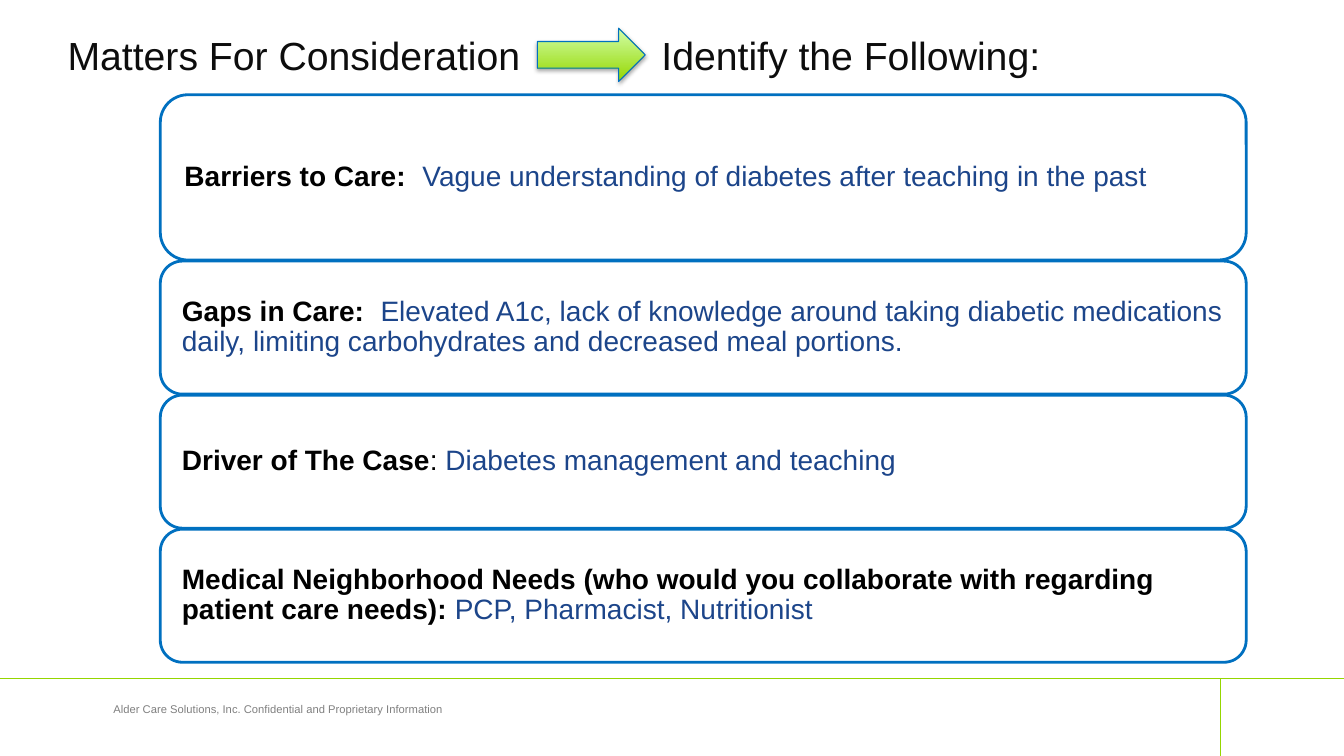
"""Build the care-planning slide with its four considerations."""
from dataclasses import dataclass
from typing import Optional

from lxml.etree import SubElement
from pptx import Presentation
from pptx.dml.color import RGBColor
from pptx.enum.shapes import MSO_CONNECTOR, MSO_SHAPE
from pptx.enum.text import MSO_ANCHOR, MSO_AUTO_SIZE, PP_ALIGN
from pptx.oxml.ns import qn
from pptx.slide import Slide
from pptx.text.text import TextFrame, _Paragraph, _Run
from pptx.util import Inches, Pt


@dataclass(frozen=True)
class Theme:
    """Colours, font and type sizes of the slide."""
    font: str = "Arial"
    title_color: str = "0D0D0D"
    label_color: str = "000000"
    answer_color: str = "1C458A"
    footer_color: str = "808080"
    outline: str = "0070C0"
    card_fill: str = "FFFFFF"
    green: str = "95D600"
    pale_green: str = "D2FFA9"
    title_size: int = 28
    card_size: int = 20
    footer_size: int = 8


@dataclass(frozen=True)
class Span:
    """A stretch of text in one style."""
    text: str
    color: str
    bold: bool = False


@dataclass(frozen=True)
class Card:
    """A rounded box with its height, inset and text."""
    height: float
    inset: float
    spans: tuple[Span, ...]
    tab: Optional[float] = None


@dataclass(frozen=True)
class Rule:
    """A thin line from one point to another."""
    start: tuple[float, float]
    end: tuple[float, float]


THEME = Theme()
PAGE_WIDTH, PAGE_HEIGHT = 13.33, 7.5
CARD_LEFT, CARD_TOP, CARD_WIDTH, CARD_GAP = 1.59, 0.94, 10.77, 0.01
FOOTER_TOP, FOOTER_SPLIT = 6.73, 12.1

RULES = (
    Rule((FOOTER_SPLIT, PAGE_HEIGHT), (FOOTER_SPLIT, FOOTER_TOP)),
    Rule((0, FOOTER_TOP), (PAGE_WIDTH, FOOTER_TOP)),
)


def label(text: str) -> Span:
    """Return a bold heading span."""
    return Span(text, THEME.label_color, True)


def answer(text: str) -> Span:
    """Return a blue answer span."""
    return Span(text, THEME.answer_color)


CARDS = (
    Card(1.64, 0.16, (
        label("Barriers to Care:\t"),
        answer("Vague understanding of diabetes after teaching in the past"),
    ), tab=2.36),
    Card(1.32, 0.15, (
        label("Gaps in Care:\t"),
        answer("Elevated A1c, lack of knowledge around taking diabetic medications "
               "daily, limiting carbohydrates and decreased meal portions."),
    ), tab=1.97),
    Card(1.32, 0.15, (
        label("Driver of The Case"),
        Span(": ", THEME.label_color),
        answer("Diabetes management and teaching"),
    )),
    Card(1.32, 0.15, (
        label("Medical Neighborhood Needs (who would you collaborate with regarding "
              "patient care needs): "),
        answer("PCP, Pharmacist, Nutritionist"),
    )),
)


def rgb(color: str) -> RGBColor:
    """Turn a hex string into a colour."""
    return RGBColor.from_string(color)


def style_run(run: _Run, size: int, color: str, bold: bool = False) -> None:
    """Set font, size, colour and weight of a run."""
    run.font.name = THEME.font
    run.font.size = Pt(size)
    run.font.bold = bold
    run.font.color.rgb = rgb(color)


def set_margins(frame: TextFrame, inset: float) -> None:
    """Give a text frame the same inset on all sides."""
    frame.margin_left = frame.margin_right = Inches(inset)
    frame.margin_top = frame.margin_bottom = Inches(inset)


def add_tab(para: _Paragraph, position: float) -> None:
    """Add a left tab stop to a paragraph."""
    tabs = SubElement(para._p.get_or_add_pPr(), qn("a:tabLst"))
    SubElement(tabs, qn("a:tab"), pos=str(Inches(position)), algn="l")


def add_rule(page: Slide, rule: Rule) -> None:
    """Draw a thin green line."""
    points = [Inches(value) for value in (*rule.start, *rule.end)]
    line = page.shapes.add_connector(MSO_CONNECTOR.STRAIGHT, *points)
    line.line.color.rgb = rgb(THEME.green)
    line.line.width = Pt(0.5)
    SubElement(line.element.spPr, qn("a:effectLst"))


def add_footer(page: Slide) -> None:
    """Write the confidentiality line."""
    box = page.shapes.add_textbox(Inches(0.42), Inches(6.92), Inches(4.68), Inches(0.42))
    frame = box.text_frame
    frame.word_wrap = True
    frame.text = "Alder Care Solutions, Inc. Confidential and Proprietary Information"
    para = frame.paragraphs[0]
    para.alignment = PP_ALIGN.CENTER
    style_run(para.runs[0], THEME.footer_size, THEME.footer_color)


def fill_title(page: Slide) -> None:
    """Place the two-part title around the arrow."""
    title = page.shapes.title
    title.left, title.top = Inches(0.67), Inches(0.28)
    title.width, title.height = Inches(10.25), Inches(0.52)
    frame = title.text_frame
    frame.text = "Matters For Consideration\tIdentify the Following:"
    frame.auto_size = MSO_AUTO_SIZE.NONE
    frame.vertical_anchor = MSO_ANCHOR.MIDDLE
    set_margins(frame, 0)
    para = frame.paragraphs[0]
    add_tab(para, 5.89)
    para.alignment = PP_ALIGN.LEFT
    for run in para.runs:
        style_run(run, THEME.title_size, THEME.title_color)


def add_arrow(page: Slide) -> None:
    """Draw the green arrow with its soft shadow."""
    arrow = page.shapes.add_shape(
        MSO_SHAPE.RIGHT_ARROW, Inches(5.33), Inches(0.28), Inches(1.07), Inches(0.53))
    arrow.fill.gradient()
    arrow.fill.gradient_angle = 90
    for stop, color, place in zip(
            arrow.fill.gradient_stops, (THEME.green, THEME.pale_green), (0, 1)):
        stop.color.rgb = rgb(color)
        stop.position = place
    arrow.line.color.rgb = rgb(THEME.outline)
    arrow.line.width = Pt(0.75)
    arrow.shadow.inherit = False
    effects = arrow.element.spPr.find(qn("a:effectLst"))
    shadow = SubElement(effects, qn("a:outerShdw"), blurRad=str(Pt(3.1)),
                        dist=str(Pt(1.8)), dir="5400000", rotWithShape="0")
    color = SubElement(shadow, qn("a:srgbClr"), val="000000")
    SubElement(color, qn("a:alpha"), val="35000")


def add_card(page: Slide, card: Card, top: float) -> None:
    """Draw one rounded box and its text."""
    box = page.shapes.add_shape(
        MSO_SHAPE.ROUNDED_RECTANGLE, Inches(CARD_LEFT), Inches(top),
        Inches(CARD_WIDTH), Inches(card.height))
    box.shadow.inherit = False
    box.fill.solid()
    box.fill.fore_color.rgb = rgb(THEME.card_fill)
    box.line.color.rgb = rgb(THEME.outline)
    box.line.width = Pt(2)
    frame = box.text_frame
    frame.word_wrap = True
    frame.vertical_anchor = MSO_ANCHOR.MIDDLE
    set_margins(frame, card.inset)
    para = frame.paragraphs[0]
    if card.tab is not None:
        add_tab(para, card.tab)
    para.alignment = PP_ALIGN.LEFT
    para.line_spacing = 0.9
    for span in card.spans:
        run = para.add_run()
        run.text = span.text
        style_run(run, THEME.card_size, span.color, span.bold)


def main() -> None:
    """Build and save the deck."""
    deck = Presentation()
    deck.slide_width, deck.slide_height = Inches(PAGE_WIDTH), Inches(PAGE_HEIGHT)
    page = deck.slides.add_slide(deck.slide_layouts[5])
    for rule in RULES:
        add_rule(page, rule)
    add_footer(page)
    fill_title(page)
    add_arrow(page)
    top = CARD_TOP
    for card in CARDS:
        add_card(page, card, top)
        top += card.height + CARD_GAP
    deck.save("out.pptx")


if __name__ == "__main__":
    main()
